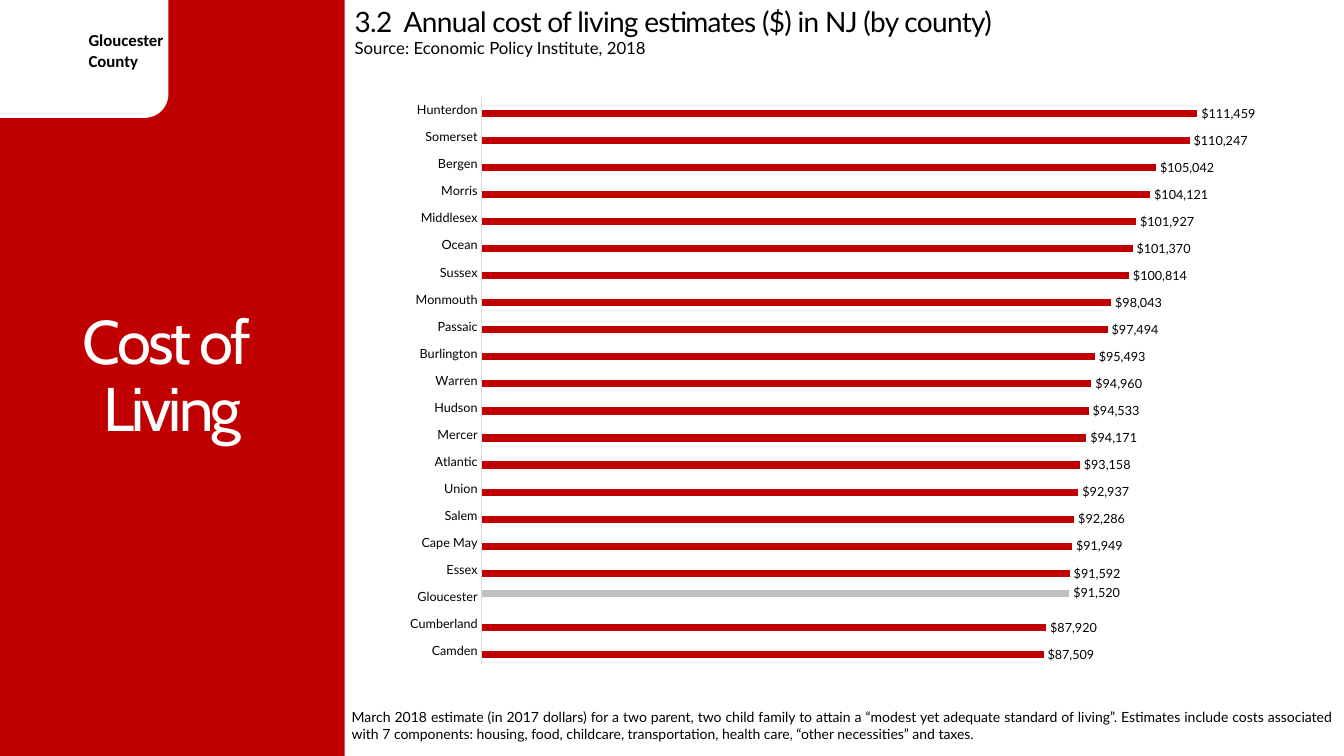
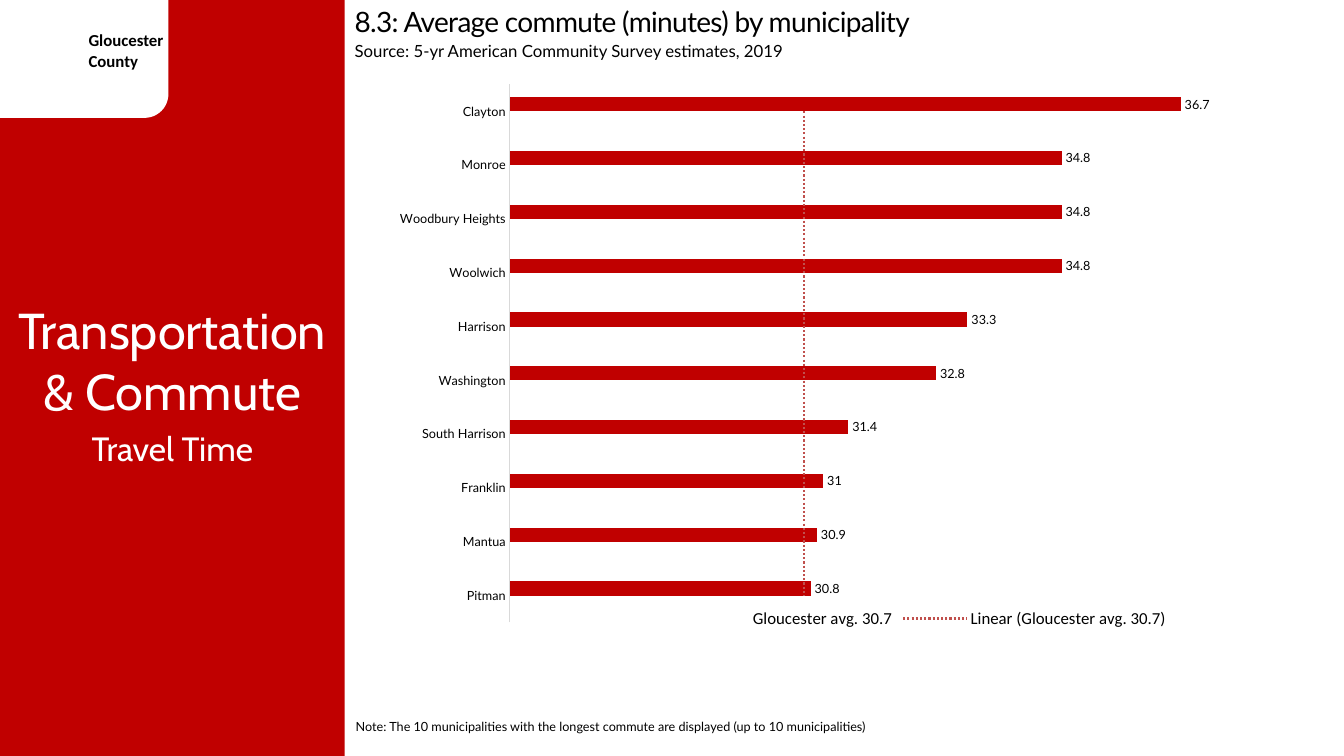
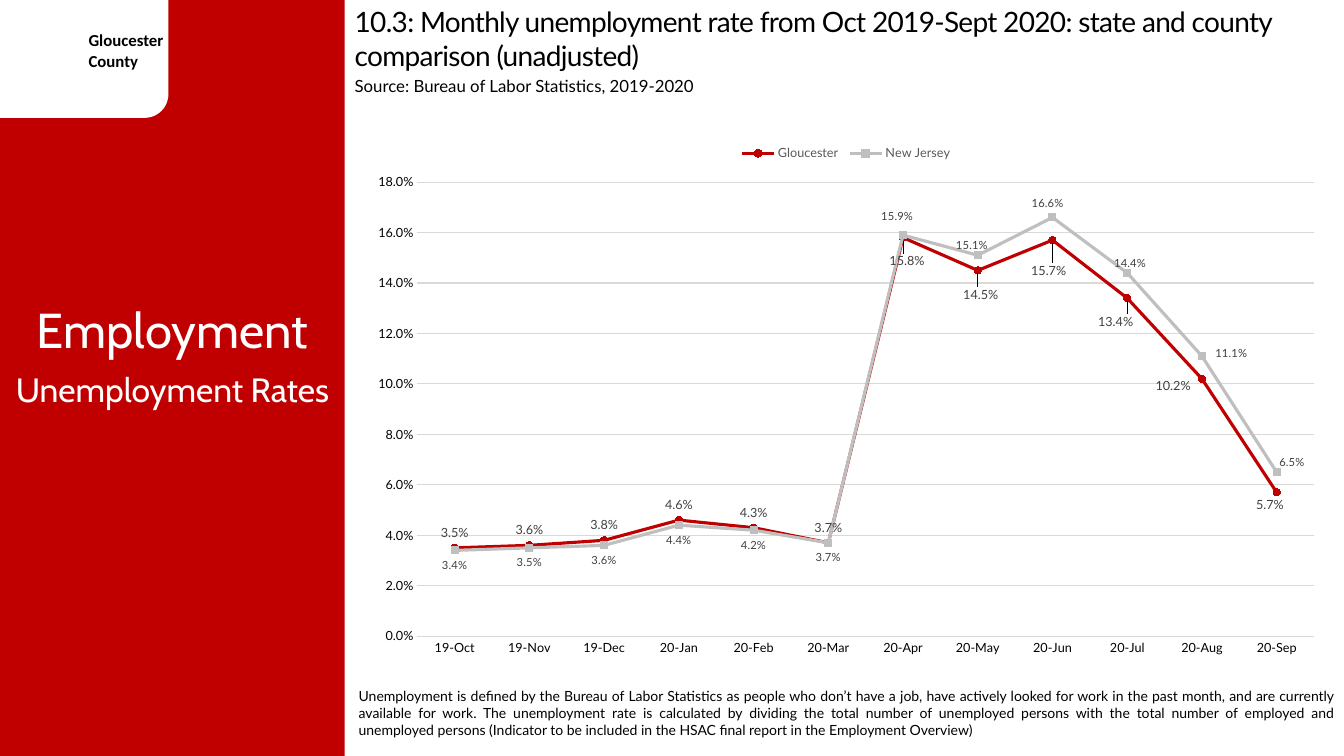
from dataclasses import dataclass

from pptx import Presentation
from pptx.chart.data import CategoryChartData as ChartData
from pptx.dml.color import RGBColor as Color
from pptx.enum.chart import XL_CHART_TYPE as Kind
from pptx.enum.chart import XL_LABEL_POSITION as Side
from pptx.enum.chart import XL_LEGEND_POSITION as LegendSide
from pptx.enum.chart import XL_MARKER_STYLE as Marker
from pptx.enum.chart import XL_TICK_MARK as Tick
from pptx.enum.shapes import MSO_SHAPE as Preset
from pptx.enum.text import MSO_ANCHOR as Anchor
from pptx.enum.text import PP_ALIGN as Align
from pptx.oxml import parse_xml
from pptx.oxml.ns import nsdecls
from pptx.util import Inches, Pt


@dataclass(frozen=True)
class Theme:
    # Colours
    red: str = "C00000"
    grey: str = "BFBFBF"
    rule: str = "D9D9D9"
    trend: str = "C0504D"
    label: str = "404040"
    legend: str = "595959"
    black: str = "000000"
    white: str = "FFFFFF"
    # Fonts
    body: str = "Lato"
    display: str = "Cabin"
    badge: str = "Calibri"
    # Type sizes
    heading: int = 20
    source: int = 12
    note: int = 10
    small: int = 9
    tiny: int = 8
    subtitle: int = 24


THEME = Theme()
SIDE_WIDTH = 25.65  # red side band, percent of the slide width


def assign(target, values):
    for name, value in values.items():
        setattr(target, name, value)


def style_font(font, size, color, name=THEME.body, bold=False):
    assign(font, {"size": Pt(size), "name": name, "bold": bold})
    font.color.rgb = Color.from_string(color)


def paint(fill, color):
    fill.solid()
    fill.fore_color.rgb = Color.from_string(color)


def draw_line(line, color, width):
    line.color.rgb = Color.from_string(color)
    line.width = Pt(width)


def chart_layout(x, y, w=None, h=None, inner=False):
    """Manual chart layout; all values are shares of the chart."""
    rows = '<c:layoutTarget val="inner"/>' if inner else ""
    if inner:
        rows += '<c:xMode val="edge"/><c:yMode val="edge"/>'
    sizes = {"x": x, "y": y, "w": w, "h": h}
    rows += "".join(f'<c:{key} val="{value}"/>'
                    for key, value in sizes.items() if value is not None)
    return parse_xml(f'<c:layout {nsdecls("c")}><c:manualLayout>{rows}'
                     "</c:manualLayout></c:layout>")


class Report:
    """Holds the deck, its style and the current page; places in percent."""

    def __init__(self, theme):
        self.theme = theme
        self.deck = Presentation()
        assign(self.deck, {"slide_width": Inches(13.33),
                           "slide_height": Inches(7.5)})
        self.page = None

    def place(self, left, top, width, height):
        across, down = self.deck.slide_width, self.deck.slide_height
        return (int(across * left / 100), int(down * top / 100),
                int(across * width / 100), int(down * height / 100))

    # Shapes and text
    def panel(self, preset, area, color):
        shape = self.page.shapes.add_shape(preset, *self.place(*area))
        shape.shadow.inherit = False
        paint(shape.fill, color)
        shape.line.fill.background()

    def text(self, area, lines, size, color=THEME.black, name=THEME.body,
             bold=False, align=Align.LEFT, anchor=Anchor.TOP,
             tracking=0, leading=None):
        box = self.page.shapes.add_textbox(*self.place(*area))
        frame = box.text_frame
        assign(frame, {"word_wrap": True, "vertical_anchor": anchor})
        for index, line in enumerate(lines):
            para = frame.add_paragraph() if index else frame.paragraphs[0]
            assign(para, {"alignment": align, "line_spacing": leading})
            span = para.add_run()
            span.text = line
            style_font(span.font, size, color, name, bold)
            if tracking:
                span.font._element.set("spc", str(int(tracking * 100)))

    # Page parts
    def new_page(self, heading, source, source_top, heading_height=5.87):
        theme = self.theme
        self.page = self.deck.slides.add_slide(self.deck.slide_layouts[6])
        self.panel(Preset.RECTANGLE, (0, 0, SIDE_WIDTH, 100), theme.red)
        self.panel(Preset.ROUNDED_RECTANGLE, (-2.47, -3.33, 15, 18.93),
                   theme.white)
        self.text((5.85, 3.33, 7.28, 6.67), ["Gloucester County"],
                  theme.source, name=theme.badge, bold=True)
        self.text((SIDE_WIDTH, 0, 73.95, heading_height), [heading],
                  theme.heading, tracking=-0.5)
        self.text((SIDE_WIDTH, source_top, 68.93, 4), [source], theme.source)

    def side_title(self, lines, size, top, height, **style):
        self.text((0, top, SIDE_WIDTH, height), lines, size, self.theme.white,
                  self.theme.display, align=Align.CENTER, **style)

    def note(self, area, words):
        self.text(area, [words], self.theme.note, align=Align.JUSTIFY,
                  anchor=Anchor.MIDDLE)

    # Charts
    def chart(self, kind, area, names, series, number_format, plot):
        theme = self.theme
        data = ChartData(number_format=number_format)
        data.categories = names
        for name, values in series:
            data.add_series(name, values)
        chart = self.page.shapes.add_chart(
            kind, *self.place(*area), data).chart
        assign(chart, {"has_title": False, "has_legend": False})
        style_font(chart.font, theme.note, theme.black, theme.badge)
        chart.plots[0].vary_by_categories = False
        axis = chart.category_axis
        axis.major_tick_mark = Tick.NONE
        style_font(axis.tick_labels.font, theme.small, theme.black)
        draw_line(axis.format.line, theme.rule, 0.75)
        region = chart._chartSpace.xpath(".//c:plotArea")[0]
        for old in region.xpath("c:layout"):
            region.remove(old)
        region.insert(0, chart_layout(*plot, inner=True))
        return chart

    def bar_chart(self, area, names, series, colors, limits, number_format,
                  plot):
        chart = self.chart(Kind.BAR_CLUSTERED, area, names, series,
                           number_format, plot)
        low, high = limits
        assign(chart.value_axis, {"minimum_scale": low, "maximum_scale": high,
                                  "has_major_gridlines": False,
                                  "visible": False})
        chart.plots[0].gap_width = 182
        for bars, color in zip(chart.plots[0].series, colors):
            paint(bars.format.fill, color)
            if color != self.theme.white:
                self.labels(bars, number_format, Side.OUTSIDE_END)
        return chart

    def line_chart(self, area, names, series, looks, number_format, plot):
        theme = self.theme
        chart = self.chart(Kind.LINE_MARKERS, area, names, series,
                           number_format, plot)
        axis = chart.value_axis
        assign(axis, {"minimum_scale": 0, "maximum_scale": 0.18,
                      "major_unit": 0.02, "major_tick_mark": Tick.NONE})
        assign(axis.tick_labels, {"number_format": number_format,
                                  "number_format_is_linked": False})
        style_font(axis.tick_labels.font, theme.small, theme.black)
        axis.format.line.fill.background()
        draw_line(axis.major_gridlines.format.line, theme.rule, 0.75)
        for line, (color, marker, side, size, moved) in zip(
                chart.plots[0].series, looks):
            line.smooth = False
            draw_line(line.format.line, color, 2.25)
            assign(line.marker, {"style": marker, "size": 5})
            paint(line.marker.format.fill, color)
            draw_line(line.marker.format.line, color, 0.75)
            self.labels(line, number_format, side, size, theme.label)
            for index, (place, across, down) in moved.items():
                label = line.points[index].data_label
                style_font(label.font, size, theme.label)
                label.position = place
                mark = label._dLbl.xpath("c:idx")[0]
                mark.addnext(chart_layout(across / 100, down / 100))
        return chart

    def labels(self, series, number_format, side, size=THEME.small,
               color=THEME.black):
        labels = series.data_labels
        assign(labels, {"show_value": True, "position": side,
                        "number_format": number_format,
                        "number_format_is_linked": False})
        style_font(labels.font, size, color)

    def legend(self, chart, side, size, color, name, hidden=(), spot=None):
        chart.has_legend = True
        legend = chart.legend
        assign(legend, {"position": side, "include_in_layout": False})
        style_font(legend.font, size, color, name)
        node = legend._element
        for old in node.xpath("c:layout"):
            node.remove(old)
        anchor = node.xpath("c:legendPos")[0]
        if spot:
            anchor.addnext(chart_layout(*spot, inner=True))
            inner = node.xpath(".//c:layoutTarget")[0]
            inner.getparent().remove(inner)
        for index in reversed(hidden):
            anchor.addnext(parse_xml(
                f'<c:legendEntry {nsdecls("c")}><c:idx val="{index}"/>'
                '<c:delete val="1"/></c:legendEntry>'))

    def trend_line(self, series, color):
        series._element.xpath("c:cat")[0].addprevious(parse_xml(
            f'<c:trendline {nsdecls("c", "a")}><c:spPr><a:ln w="{Pt(1.5)}">'
            f'<a:solidFill><a:srgbClr val="{color}"/></a:solidFill>'
            '<a:prstDash val="sysDot"/></a:ln></c:spPr>'
            '<c:trendlineType val="linear"/><c:dispRSqr val="0"/>'
            '<c:dispEq val="0"/></c:trendline>'))


def cost_page(report):
    report.new_page("3.2  Annual cost of living estimates ($) in NJ (by county)",
                    "Source: Economic Policy Institute, 2018", 4.4)
    report.side_title(["Cost of ", "Living"], 44, 10, 80, tracking=-2,
                      leading=0.9, anchor=Anchor.MIDDLE)
    report.note((25.43, 93.07, 74.4, 5.87),
                "March 2018 estimate (in 2017 dollars) for a two parent, two "
                "child family to attain a “modest yet adequate standard of "
                "living”. Estimates include costs associated with 7 "
                "components: housing, food, childcare, transportation, health "
                "care, “other necessities” and taxes.")
    costs = {
        "Camden": 87509, "Cumberland": 87920, "Gloucester": 91520,
        "Essex": 91592, "Cape May": 91949, "Salem": 92286, "Union": 92937,
        "Atlantic": 93158, "Mercer": 94171, "Hudson": 94533, "Warren": 94960,
        "Burlington": 95493, "Passaic": 97494, "Monmouth": 98043,
        "Sussex": 100814, "Ocean": 101370, "Middlesex": 101927,
        "Morris": 104121, "Bergen": 105042, "Somerset": 110247,
        "Hunterdon": 111459}
    home = "Gloucester"
    others = [None if name == home else cost for name, cost in costs.items()]
    own = [cost if name == home else None for name, cost in costs.items()]
    report.bar_chart((27.83, 10.4, 66.68, 79.07), list(costs),
                     [("Series 1", others), ("Series 2", own)],
                     [THEME.red, THEME.grey], (0, 120000), '"$"#,##0',
                     (0.12, 0.03, 0.86, 0.95))


def commute_page(report):
    report.new_page("8.3: Average commute (minutes) by municipality",
                    "Source: 5-yr American Community Survey estimates, 2019",
                    4.8)
    report.side_title(["Transportation & Commute"], 36, 38.93, 17.47)
    report.side_title(["Travel Time"], THEME.subtitle, 56, 6.67)
    minutes = {
        "Clayton": 36.7, "Monroe": 34.8, "Woodbury Heights": 34.8,
        "Woolwich": 34.8, "Harrison": 33.3, "Washington": 32.8,
        "South Harrison": 31.4, "Franklin": 31, "Mantua": 30.9,
        "Pitman": 30.8}
    chart = report.bar_chart(
        (28.58, 9.6, 66.68, 79.07), list(minutes),
        [("Time (min)", list(minutes.values())),
         ("Gloucester avg. 30.7", [30.7] * len(minutes))],
        [THEME.red, THEME.white], (26, 38), "General",
        (0.14, 0.02, 0.84, 0.9))
    chart.category_axis.reverse_order = True
    report.trend_line(chart.plots[0].series[1], THEME.trend)
    report.legend(chart, LegendSide.BOTTOM, THEME.source, THEME.black,
                  THEME.badge, hidden=(1, 2), spot=(0.33, 0.89))
    report.text((25.73, 94.4, 50, 3.33),
                ["Note: The 10 municipalities with the longest commute are "
                 "displayed (up to 10 municipalities)"], THEME.small)


def employment_page(report):
    report.new_page("10.3: Monthly unemployment rate from Oct 2019-Sept 2020: "
                    "state and county comparison (unadjusted)",
                    "Source: Bureau of Labor Statistics, 2019-2020", 9.33,
                    heading_height=10.27)
    report.side_title(["Employment"], 35, 38.93, 9.2)
    report.side_title(["Unemployment Rates"], THEME.subtitle, 48.13, 6.67)
    report.note((25.95, 90.93, 74.03, 6.67),
                "Unemployment is defined by the Bureau of Labor Statistics as "
                "people who don’t have a job, have actively looked for work in "
                "the past month, and are currently available for work. The "
                "unemployment rate is calculated by dividing the total number "
                "of unemployed persons with the total number of employed and "
                "unemployed persons (Indicator to be included in the HSAC "
                "final report in the Employment Overview)")
    months = ["19-Oct", "19-Nov", "19-Dec", "20-Jan", "20-Feb", "20-Mar",
              "20-Apr", "20-May", "20-Jun", "20-Jul", "20-Aug", "20-Sep"]
    county = [3.5, 3.6, 3.8, 4.6, 4.3, 3.7, 15.8, 14.5, 15.7, 13.4, 10.2, 5.7]
    state = [3.4, 3.5, 3.6, 4.4, 4.2, 3.7, 15.9, 15.1, 16.6, 14.4, 11.1, 6.5]
    rates = [(name, [round(value / 100, 3) for value in values])
             for name, values in (("Gloucester ", county),
                                  ("New Jersey", state))]
    # Label side and shift (percent of the chart) by month
    county_moves = {6: (Side.BELOW, 0.4, 1.5), 7: (Side.BELOW, 0.3, 1.7),
                    8: (Side.BELOW, -0.4, 2.8), 9: (Side.BELOW, -1.2, 1.5),
                    10: (Side.LEFT, -0.4, 1.3), 11: (Side.BELOW, -0.7, -0.6)}
    state_moves = {6: (Side.ABOVE, -0.6, -0.9), 7: (Side.ABOVE, -0.6, 0.7),
                   8: (Side.ABOVE, -0.5, 0), 9: (Side.ABOVE, 0.3, 0.7),
                   10: (Side.RIGHT, 0.6, -0.6), 11: (Side.RIGHT, -0.5, -1.9)}
    chart = report.line_chart(
        (26.7, 17.73, 72.53, 70.67), months, rates,
        [(THEME.red, Marker.CIRCLE, Side.ABOVE, THEME.small, county_moves),
         (THEME.grey, Marker.SQUARE, Side.BELOW, THEME.tiny, state_moves)],
        "0.0%", (0.06, 0.09, 0.92, 0.85))
    report.legend(chart, LegendSide.TOP, THEME.small, THEME.legend, THEME.body)


def main():
    report = Report(THEME)
    for build in (cost_page, commute_page, employment_page):
        build(report)
    report.deck.save("out.pptx")


if __name__ == "__main__":
    main()
